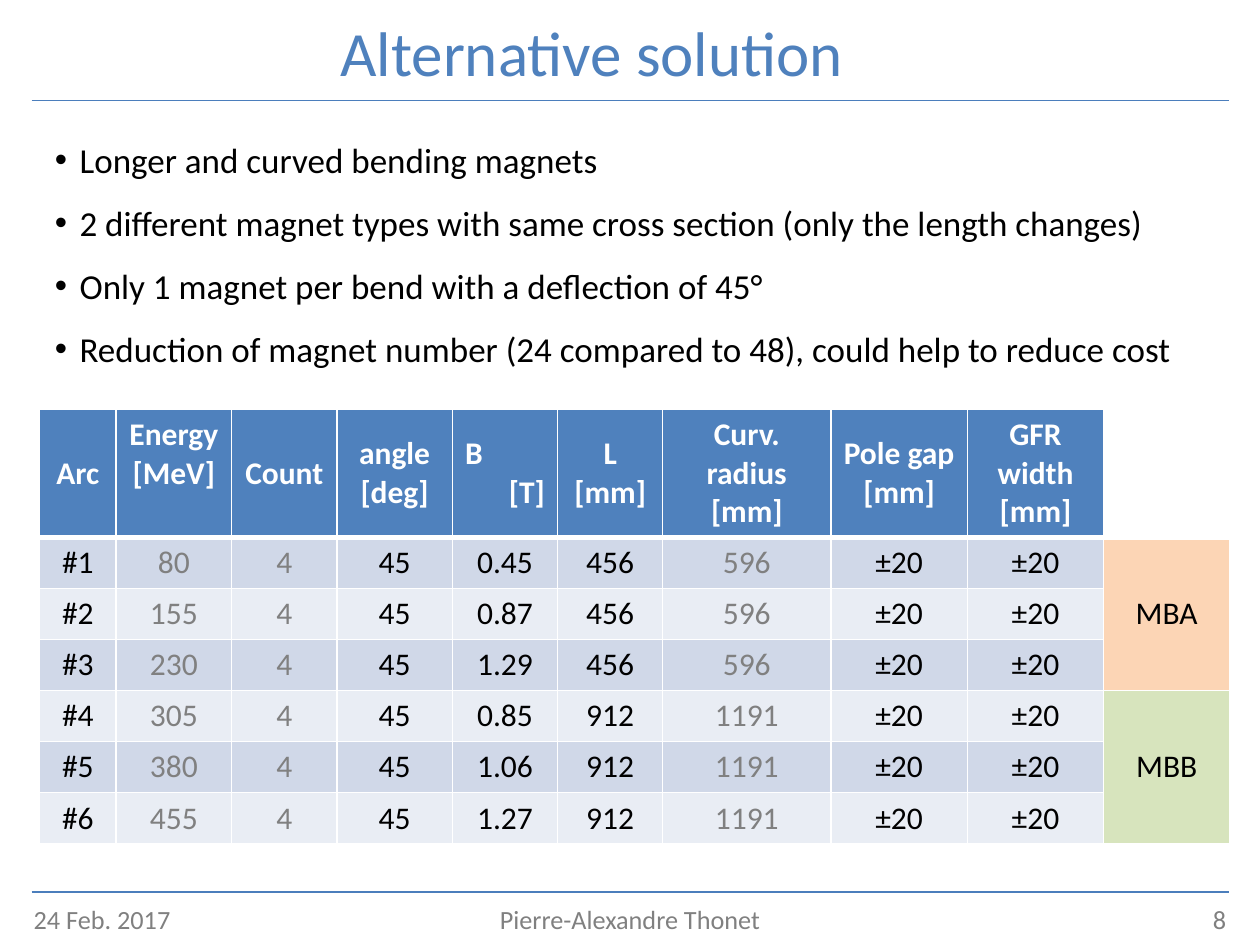
import pptx
import pptx.dml.color
import pptx.enum.shapes
import pptx.enum.text
import pptx.oxml.xmlchemy
import pptx.util

Cm = pptx.util.Cm
Pt = pptx.util.Pt
RGB = pptx.dml.color.RGBColor
ALIGN = pptx.enum.text.PP_ALIGN
ANCHOR = pptx.enum.text.MSO_ANCHOR
new_element = pptx.oxml.xmlchemy.OxmlElement

BLUE = RGB(0x4F, 0x81, 0xBD)
RULE = RGB(0x4B, 0x7E, 0xBC)
GREY = RGB(0x80, 0x80, 0x80)
BLACK = RGB(0, 0, 0)
WHITE = RGB(0xFF, 0xFF, 0xFF)
BAND_DARK = RGB(0xD0, 0xD8, 0xE8)
BAND_LIGHT = RGB(0xE9, 0xED, 0xF4)
ORANGE = RGB(0xFC, 0xD5, 0xB5)
GREEN = RGB(0xD7, 0xE4, 0xBD)

BULLETS = [
    "Longer and curved bending magnets",
    "2 different magnet types with same cross section (only the length changes)",
    "Only 1 magnet per bend with a deflection of 45°",
    "Reduction of magnet number (24 compared to 48), could help to reduce cost",
]
HEADERS = [
    ["Arc"], ["Energy", "[MeV]"], ["Count"], ["angle [deg]"], ["B", "[T]"],
    ["L [mm]"], ["Curv. radius [mm]"], ["Pole gap [mm]"], ["GFR width [mm]"],
]
COL_WIDTHS = [1.54, 2.33, 2.12, 2.33, 2.12, 2.12, 3.39, 2.75, 2.75, 2.54]
HEADER_HEIGHT, ROW_HEIGHT = 2.58, 1.03
ARCS = [
    ("80", "0.45", "456", "596"),
    ("155", "0.87", "456", "596"),
    ("230", "1.29", "456", "596"),
    ("305", "0.85", "912", "1191"),
    ("380", "1.06", "912", "1191"),
    ("455", "1.27", "912", "1191"),
]
GREY_COLUMNS = {1, 2, 6}
MAGNET_TYPES = [("MBA", ORANGE), ("MBB", GREEN)]
ARCS_PER_TYPE = 3


def add_run(p, text, size, color, bold=False):
    r = p.add_run()
    r.text = text
    r.font.name = "Calibri"
    r.font.size = Pt(size)
    r.font.color.rgb = color
    r.font.bold = bold


def place(sp, left, top, width, height):
    sp.left, sp.top, sp.width, sp.height = Cm(left), Cm(top), Cm(width), Cm(height)


def add_title(s, left, top, width, height):
    sp = s.shapes.title
    place(sp, left, top, width, height)
    tf = sp.text_frame
    tf.vertical_anchor = ANCHOR.MIDDLE
    p = tf.paragraphs[0]
    p.alignment = ALIGN.CENTER
    add_run(p, "Alternative solution", 36, BLUE)


def add_bullets(s, left, top, width, height):
    sp = s.placeholders[1]
    place(sp, left, top, width, height)
    tf = sp.text_frame
    tf.auto_size = pptx.enum.text.MSO_AUTO_SIZE.NONE
    for i, text in enumerate(BULLETS):
        p = tf.paragraphs[0] if i == 0 else tf.add_paragraph()
        pPr = p._p.get_or_add_pPr()
        pPr.set("marL", str(Cm(0.71)))
        pPr.set("indent", str(Cm(-0.5)))
        p.space_before = Pt(0)
        p.space_after = Pt(12)
        add_run(p, text, 20, BLACK)


def add_rule(s, left, top, width):
    line = s.shapes.add_connector(
        pptx.enum.shapes.MSO_CONNECTOR.STRAIGHT,
        Cm(left), Cm(top), Cm(left + width), Cm(top))
    line.line.color.rgb = RULE
    line.line.width = Pt(0.75)
    line._element.spPr.append(new_element("a:effectLst"))


def add_footer(s, left, top, width, height):
    side, middle = 5.92, 8.05
    parts = [
        ("24 Feb. 2017", left, side, ALIGN.LEFT),
        ("Pierre-Alexandre Thonet", left + (width - middle) / 2, middle, ALIGN.CENTER),
        ("8", left + width - side, side, ALIGN.RIGHT),
    ]
    for text, x, w, align in parts:
        tf = s.shapes.add_textbox(Cm(x), Cm(top), Cm(w), Cm(height)).text_frame
        tf.word_wrap = True
        p = tf.paragraphs[0]
        p.alignment = align
        add_run(p, text, 15, GREY)


def set_borders(cell, top=1, bottom=1):
    tcPr = cell._tc.get_or_add_tcPr()
    for side, width in (("L", 1), ("R", 1), ("T", top), ("B", bottom)):
        ln = new_element("a:ln" + side)
        ln.set("w", str(Pt(width)))
        fill = new_element("a:solidFill")
        color = new_element("a:srgbClr")
        color.set("val", str(WHITE))
        fill.append(color)
        ln.append(fill)
        tcPr.append(ln)


def fill_cell(cell, lines, fill, color, bold=False, anchor=ANCHOR.MIDDLE):
    cell.fill.solid()
    cell.fill.fore_color.rgb = fill
    cell.vertical_anchor = anchor
    tf = cell.text_frame
    for i, text in enumerate(lines):
        p = tf.paragraphs[0] if i == 0 else tf.add_paragraph()
        p.alignment = ALIGN.CENTER
        add_run(p, text, 18, color, bold)


def add_arc_table(s, left, top):
    rows, cols = len(ARCS) + 1, len(COL_WIDTHS)
    height = HEADER_HEIGHT + ROW_HEIGHT * len(ARCS)
    table = s.shapes.add_table(
        rows, cols, Cm(left), Cm(top), Cm(sum(COL_WIDTHS)), Cm(height)).table
    for column, width in zip(table.columns, COL_WIDTHS):
        column.width = Cm(width)
    for r, row in enumerate(table.rows):
        row.height = Cm(ROW_HEIGHT if r else HEADER_HEIGHT)
        for cell in row.cells:
            set_borders(cell, top=3 if r == 1 else 1, bottom=1 if r else 3)

    for c, lines in enumerate(HEADERS):
        fill_cell(table.cell(0, c), lines, BLUE, WHITE, bold=True)
    table.cell(0, 1).margin_bottom = Cm(0.9)
    field = table.cell(0, 4).text_frame.paragraphs
    field[0].alignment, field[1].alignment = ALIGN.LEFT, ALIGN.RIGHT
    table.cell(0, cols - 1).fill.background()

    for r, (energy, b, length, radius) in enumerate(ARCS, 1):
        values = [f"#{r}", energy, "4", "45", b, length, radius, "±20", "±20"]
        band = BAND_DARK if r % 2 else BAND_LIGHT
        for c, value in enumerate(values):
            fill_cell(table.cell(r, c), [value], band,
                      GREY if c in GREY_COLUMNS else BLACK,
                      anchor=ANCHOR.MIDDLE if c else ANCHOR.TOP)

    for i, (name, fill) in enumerate(MAGNET_TYPES):
        first = 1 + i * ARCS_PER_TYPE
        cell = table.cell(first, cols - 1)
        cell.merge(table.cell(first + ARCS_PER_TYPE - 1, cols - 1))
        fill_cell(cell, [name], fill, BLACK)


def main():
    prs = pptx.Presentation()
    prs.slide_width, prs.slide_height = Cm(25.4), Cm(19.05)
    s = prs.slides.add_slide(prs.slide_layouts[1])
    for y in (2.03, 17.98):
        add_rule(s, 0.64, y, 24.13)
    add_title(s, 0.5, 0.2, 22.86, 1.65)
    add_bullets(s, 0.64, 2.67, 24.76, 4.95)
    add_arc_table(s, 0.8, 8.25)
    add_footer(s, 0.43, 18.08, 24.54, 0.76)
    prs.save("out.pptx")


if __name__ == "__main__":
    main()
